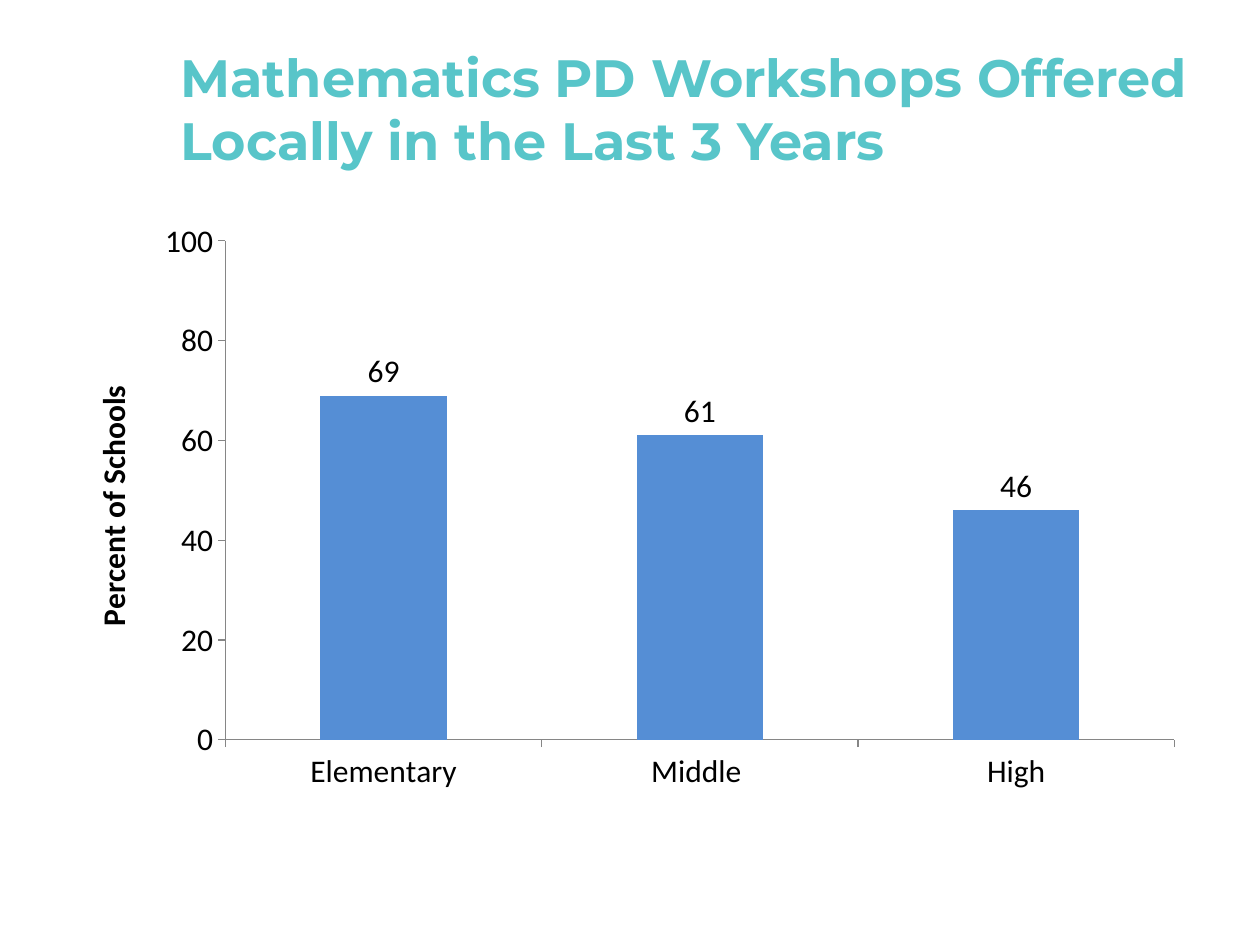
from pptx import Presentation
from pptx import util as u
from pptx.chart import data as cd
from pptx.dml import color
from pptx.enum import chart as ch, text

COLORS = {"title": "58C5C9", "bar": "558ED5", "text": "000000", "axis": "868686"}


def rgb(name):
    """Return the named colour."""
    return color.RGBColor.from_string(COLORS[name])


def style_font(font, name, size, color_name, bold=False):
    """Set the face, size, colour and weight of a font."""
    font.name, font.size, font.bold = name, u.Pt(size), bold
    font.color.rgb = rgb(color_name)


def add_title(s, title, x, y, w, h):
    """Add the slide title."""
    tf = s.shapes.add_textbox(u.Pt(x), u.Pt(y), u.Pt(w), u.Pt(h)).text_frame
    tf.word_wrap = True
    tf.auto_size = text.MSO_AUTO_SIZE.NONE
    tf.vertical_anchor = text.MSO_ANCHOR.MIDDLE
    r = tf.paragraphs[0].add_run()
    r.text = title
    style_font(r.font, "Montserrat", 30, "title", True)


def style_axis(axis):
    """Give an axis outer ticks, a thin grey line and no gridlines."""
    axis.has_major_gridlines = False
    axis.major_tick_mark = ch.XL_TICK_MARK.OUTSIDE
    axis.minor_tick_mark = ch.XL_TICK_MARK.NONE
    axis.format.line.color.rgb = rgb("axis")
    axis.format.line.width = u.Pt(0.75)


def add_columns(s, values, axis_title, x, y, w, h):
    """Add a single-series column chart of percentages."""
    data = cd.CategoryChartData()
    data.categories = list(values)
    data.add_series("Series 1", list(values.values()))
    chart = s.shapes.add_chart(ch.XL_CHART_TYPE.COLUMN_CLUSTERED,
                               u.Pt(x), u.Pt(y), u.Pt(w), u.Pt(h), data).chart
    chart.has_legend = False
    chart.has_title = False
    style_font(chart.font, "Calibri", 18, "text")

    style_axis(chart.category_axis)
    axis = chart.value_axis
    style_axis(axis)
    axis.minimum_scale, axis.maximum_scale, axis.major_unit = 0, 100, 20
    r = axis.axis_title.text_frame.paragraphs[0].add_run()
    r.text = axis_title
    style_font(r.font, "Calibri", 18, "text", True)

    plot = chart.plots[0]
    plot.gap_width = 150
    plot.vary_by_categories = False
    fill = plot.series[0].format.fill
    fill.solid()
    fill.fore_color.rgb = rgb("bar")
    labels = plot.series[0].data_labels
    labels.show_value = True
    labels.position = ch.XL_LABEL_POSITION.OUTSIDE_END
    style_font(labels.font, "Calibri", 18, "text")


def main():
    """Build the slide and save it."""
    prs = Presentation()
    prs.slide_width, prs.slide_height = u.Pt(720), u.Pt(540)
    s = prs.slides.add_slide(prs.slide_layouts[6])
    add_columns(s, {"Elementary": 69, "Middle ": 61, "High": 46},
                "Percent of Schools", 36, 120, 648, 338.4)
    add_title(s, "Mathematics PD Workshops Offered Locally in the Last 3 Years",
              96, 27.4, 594, 68.4)
    prs.save("out.pptx")


if __name__ == "__main__":
    main()
